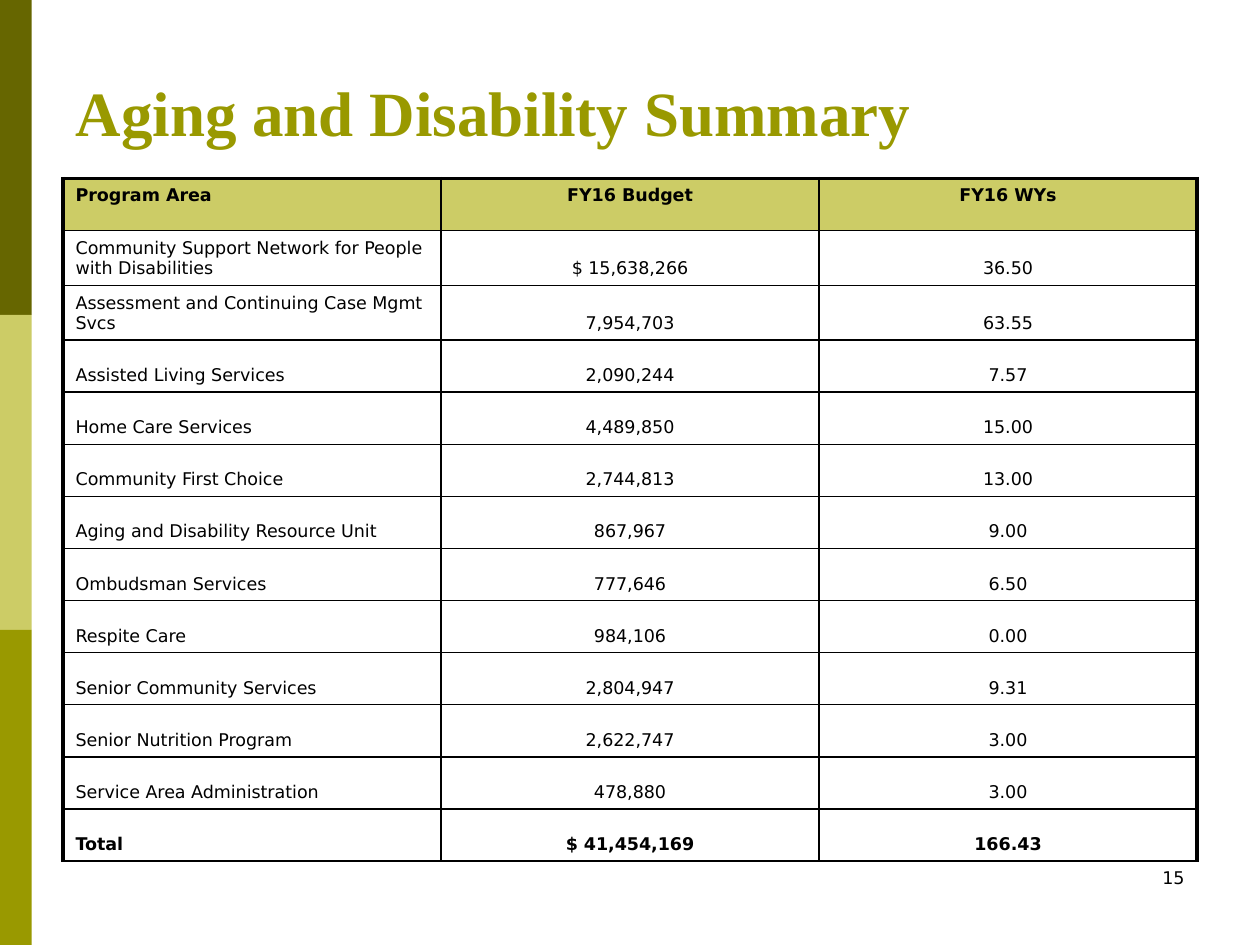
from pptx import Presentation, util as u
from pptx.dml.color import RGBColor
from pptx.enum import shapes, text
from lxml import etree

A = "http://schemas.openxmlformats.org/drawingml/2006/main"
COLORS = {"dark": "666600", "light": "CCCC66", "olive": "999900", "black": "000000"}
LEFT, CENTER, RIGHT = text.PP_ALIGN.LEFT, text.PP_ALIGN.CENTER, text.PP_ALIGN.RIGHT
TOP, BOTTOM = text.MSO_ANCHOR.TOP, text.MSO_ANCHOR.BOTTOM

ROWS = [
    ("Program Area", "FY16 Budget", "FY16 WYs"),
    ("Community Support Network for People with Disabilities", "$ 15,638,266", "36.50"),
    ("Assessment and Continuing Case Mgmt Svcs", "7,954,703", "63.55"),
    ("Assisted Living Services", "2,090,244", "7.57"),
    ("Home Care Services", "4,489,850", "15.00"),
    ("Community First Choice", "2,744,813", "13.00"),
    ("Aging and Disability Resource Unit", "867,967", "9.00"),
    ("Ombudsman Services", "777,646", "6.50"),
    ("Respite Care", "984,106", "0.00"),
    ("Senior Community Services", "2,804,947", "9.31"),
    ("Senior Nutrition Program", "2,622,747", "3.00"),
    ("Service Area Administration", "478,880", "3.00"),
    ("Total", "$ 41,454,169", "166.43"),
]


class Deck:
    font = "DejaVu Sans"
    size = 10

    def __init__(self):
        self.prs = Presentation()
        self.prs.slide_width, self.prs.slide_height = u.Cm(25.4), u.Cm(19.05)
        self.s = self.prs.slides.add_slide(self.prs.slide_layouts[5])

    def color(self, name):
        return RGBColor.from_string(COLORS[name])

    def add_text(self, tf, words, align=LEFT, bold=False, size=None, font=None, color="black"):
        tf.word_wrap = True
        p = tf.paragraphs[0]
        p.alignment = align
        r = p.add_run()
        r.text = words
        r.font.name, r.font.size = font or self.font, u.Pt(size or self.size)
        r.font.bold = bold
        r.font.color.rgb = self.color(color)

    def title(self, words, x, y, w, h):
        sp = self.s.shapes.title
        sp.left, sp.top, sp.width, sp.height = map(u.Cm, (x, y, w, h))
        tf = sp.text_frame
        tf.auto_size = text.MSO_AUTO_SIZE.NONE
        tf.vertical_anchor = BOTTOM
        tf.margin_bottom = u.Cm(0.18)
        self.add_text(tf, words, bold=True, size=36, font="Times New Roman", color="olive")

    def bar(self, color, x, y, w, h):
        sp = self.s.shapes.add_shape(shapes.MSO_SHAPE.RECTANGLE, *map(u.Cm, (x, y, w, h)))
        sp.shadow.inherit = False
        sp.fill.solid()
        sp.fill.fore_color.rgb = self.color(color)
        sp.line.fill.background()

    def label(self, words, x, y, w, h, align):
        sp = self.s.shapes.add_textbox(*map(u.Cm, (x, y, w, h)))
        self.add_text(sp.text_frame, words, align)

    def border(self, cell, side, width):
        tcPr = cell._tc.get_or_add_tcPr()
        ln = etree.SubElement(tcPr, f"{{{A}}}ln{side}", w=str(u.Pt(width)))
        fill = etree.SubElement(ln, f"{{{A}}}solidFill")
        etree.SubElement(fill, f"{{{A}}}srgbClr", val=COLORS["black"])

    def table(self, rows, x, y, w, row_h):
        n, m = len(rows), len(rows[0])
        frame = self.s.shapes.add_table(n, m, *map(u.Cm, (x, y, w, n * row_h)))
        tbl = frame.table
        tbl.horz_banding = tbl.first_row = False
        for col in tbl.columns:
            col.width = u.Cm(w / m)
        for i, row in enumerate(rows):
            tbl.rows[i].height = u.Cm(row_h)
            for j, words in enumerate(row):
                cell = tbl.cell(i, j)
                outer = {"L": j == 0, "R": j == m - 1, "T": i == 0, "B": False}
                for side, thick in outer.items():
                    self.border(cell, side, 2.25 if thick else 1)
                if i == 0:
                    cell.fill.solid()
                    cell.fill.fore_color.rgb = self.color("light")
                else:
                    cell.fill.background()
                cell.vertical_anchor = BOTTOM if i else TOP
                self.add_text(cell.text_frame, words, CENTER if j else LEFT, i in (0, n - 1))


def main():
    d = Deck()
    for i, color in enumerate(("dark", "light", "olive")):
        d.bar(color, 0, i * 6.35, 0.64, 6.35)
    d.title("Aging and Disability Summary", 1.27, 0, 22.86, 3.18)
    d.label("15", 18.2, 17.36, 5.93, 1.27, RIGHT)
    d.table(ROWS, 1.27, 3.6, 22.86, 1.05)
    d.prs.save("out.pptx")


if __name__ == "__main__":
    main()
